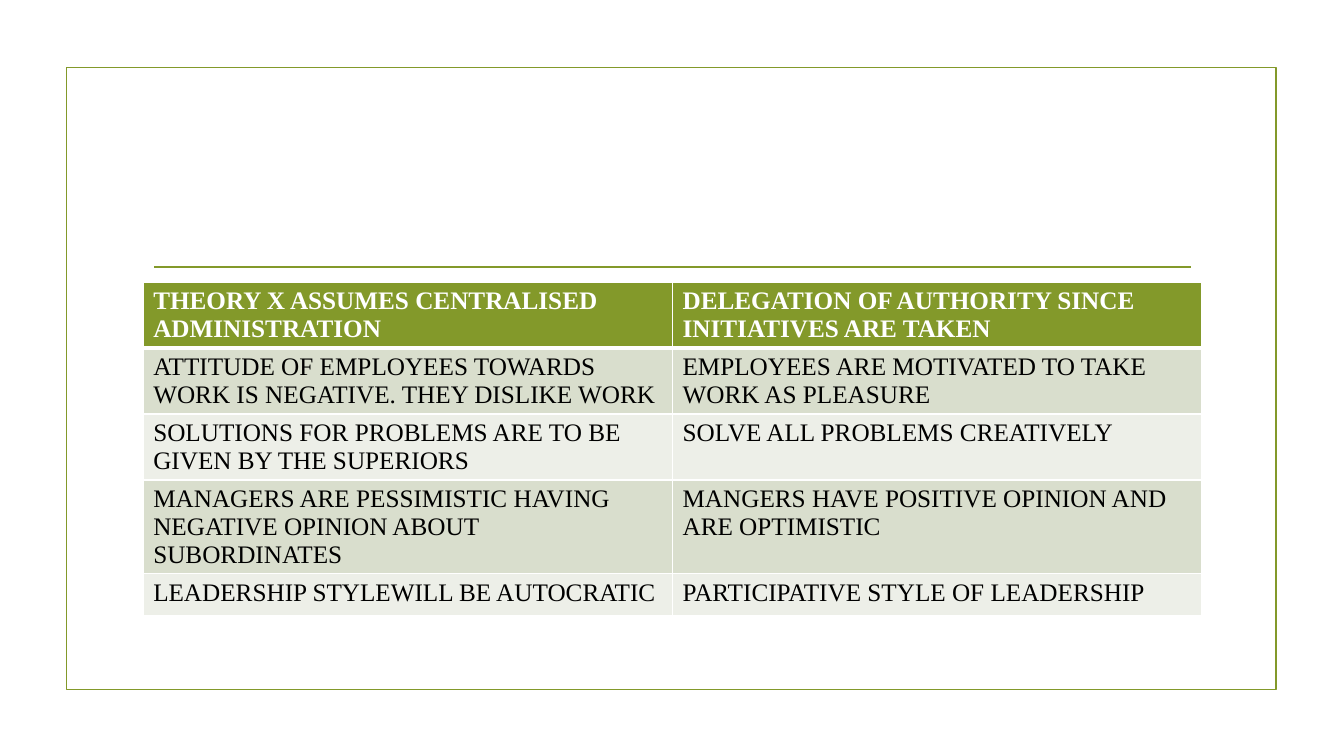
from dataclasses import dataclass

from lxml import etree
from pptx import Presentation
from pptx.dml.color import RGBColor
from pptx.enum import shapes
from pptx.oxml import ns
from pptx.util import Inches, Pt

GREEN, WHITE, BLACK = "83992A", "FFFFFF", "000000"
BANDS = ("D9DECD", "EDEFE8")
FONT = "Times New Roman"


@dataclass
class Comparison:
    theory_x: str
    theory_y: str


COMPARISONS = [
    Comparison("THEORY X ASSUMES CENTRALISED ADMINISTRATION",
               "DELEGATION OF AUTHORITY SINCE INITIATIVES ARE TAKEN"),
    Comparison("ATTITUDE OF EMPLOYEES TOWARDS WORK IS NEGATIVE. THEY DISLIKE WORK",
               "EMPLOYEES ARE MOTIVATED TO TAKE WORK AS PLEASURE"),
    Comparison("SOLUTIONS FOR PROBLEMS ARE TO BE GIVEN BY THE SUPERIORS",
               "SOLVE ALL PROBLEMS CREATIVELY"),
    Comparison("MANAGERS ARE PESSIMISTIC HAVING NEGATIVE OPINION ABOUT SUBORDINATES",
               "MANGERS HAVE POSITIVE OPINION AND ARE OPTIMISTIC"),
    Comparison("LEADERSHIP STYLEWILL BE AUTOCRATIC",
               "PARTICIPATIVE STYLE OF LEADERSHIP"),
]


def rgb(color: str) -> RGBColor:
    return RGBColor.from_string(color)


def style_line(line) -> None:
    line.color.rgb = rgb(GREEN)
    line.width = Pt(1.25)


def add_frame(s) -> None:
    sp = s.shapes.add_shape(shapes.MSO_SHAPE.RECTANGLE, Inches(0.66), Inches(0.67),
                            Inches(12), Inches(6.17))
    sp.shadow.inherit = False
    sp.fill.background()
    style_line(sp.line)


def add_title_rule(s) -> None:
    rule = s.shapes.add_connector(shapes.MSO_CONNECTOR.STRAIGHT, Inches(1.53),
                                  Inches(2.65), Inches(11.81), Inches(2.65))
    style_line(rule.line)
    etree.SubElement(rule._element.spPr, ns.qn("a:effectLst"))


def set_borders(cell, bottom: float, top: float) -> None:
    tc_pr = cell._tc.get_or_add_tcPr()
    for side, width in (("L", 1), ("R", 1), ("T", top), ("B", bottom)):
        ln = etree.SubElement(tc_pr, ns.qn(f"a:ln{side}"), w=str(Pt(width)))
        fill = etree.SubElement(ln, ns.qn("a:solidFill"))
        etree.SubElement(fill, ns.qn("a:srgbClr"), val=WHITE)


def fill_cell(cell, label: str, row: int) -> None:
    header = row == 0
    set_borders(cell, bottom=3 if header else 1, top=3 if row == 1 else 1)
    cell.fill.solid()
    cell.fill.fore_color.rgb = rgb(GREEN if header else BANDS[(row - 1) % 2])
    cell.text = label
    font = cell.text_frame.paragraphs[0].font
    font.name, font.size, font.bold = FONT, Pt(18), header
    font.color.rgb = rgb(WHITE if header else BLACK)


def add_comparison_table(s) -> None:
    row_height = 0.41
    table = s.shapes.add_table(len(COMPARISONS), 2, Inches(1.42), Inches(2.8),
                               Inches(10.5), Inches(row_height * len(COMPARISONS))).table
    for row, item in enumerate(COMPARISONS):
        table.rows[row].height = Inches(row_height)
        for col, label in enumerate((item.theory_x, item.theory_y)):
            fill_cell(table.cell(row, col), label, row)


def main() -> None:
    prs = Presentation()
    prs.slide_width, prs.slide_height = Inches(13.33), Inches(7.5)
    s = prs.slides.add_slide(prs.slide_layouts[6])
    add_frame(s)
    add_title_rule(s)
    add_comparison_table(s)
    prs.save("out.pptx")


if __name__ == "__main__":
    main()
